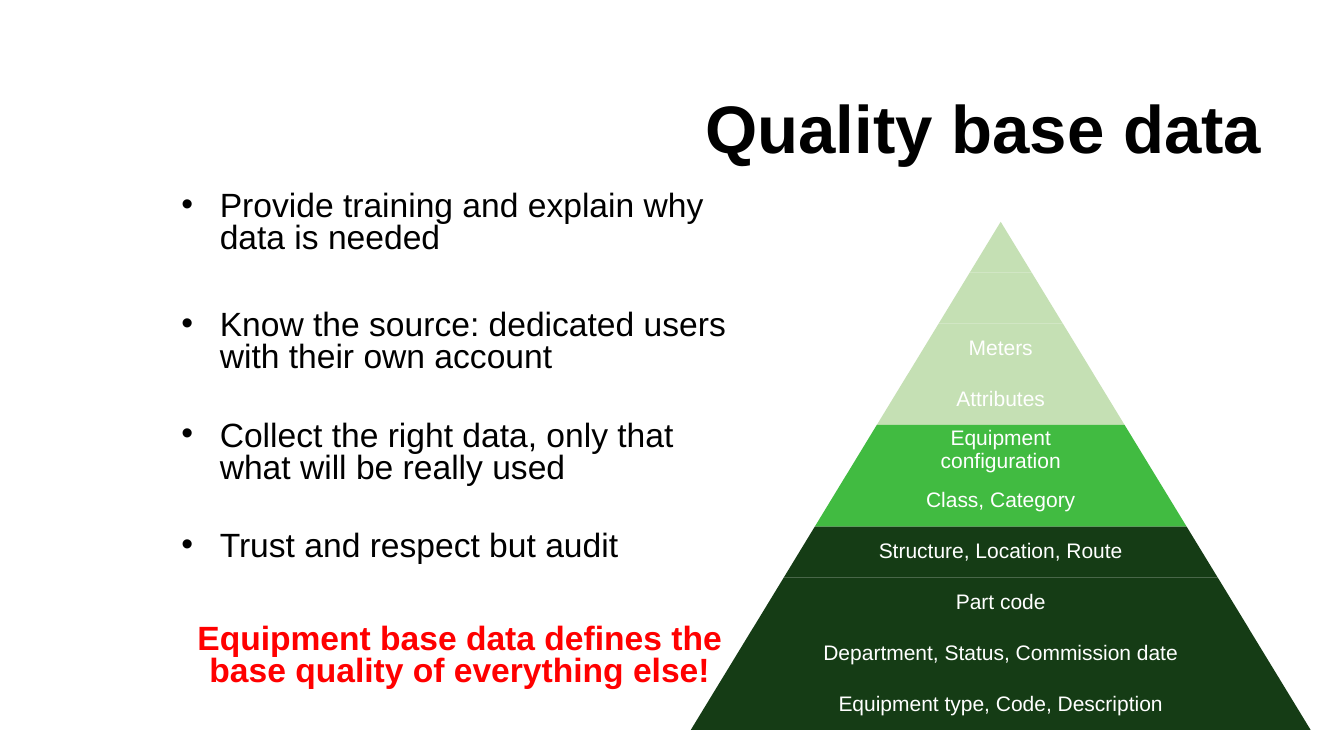
from lxml import etree
from pptx import Presentation
from pptx.dml.color import RGBColor
from pptx.enum.shapes import MSO_SHAPE
from pptx.enum.text import MSO_ANCHOR, PP_ALIGN
from pptx.oxml.ns import qn
from pptx.util import Cm, Pt

TRAPEZOID = MSO_SHAPE.TRAPEZOID
TOP, MIDDLE, BOTTOM = MSO_ANCHOR.TOP, MSO_ANCHOR.MIDDLE, MSO_ANCHOR.BOTTOM
LEFT, CENTER, RIGHT = PP_ALIGN.LEFT, PP_ALIGN.CENTER, PP_ALIGN.RIGHT

BLACK = RGBColor(0x00, 0x00, 0x00)
WHITE = RGBColor(0xFF, 0xFF, 0xFF)
RED = RGBColor(0xFF, 0x00, 0x00)
PALE_GREEN = RGBColor(0xC5, 0xE0, 0xB4)
GREEN = RGBColor(0x41, 0xBB, 0x41)
DARK_GREEN = RGBColor(0x15, 0x3C, 0x15)

ADVICE = [
    ("Provide training and explain why data is needed", 0),
    ("Know the source: dedicated users with their own account", 39),
    ("Collect the right data, only that what will be really used", 33),
    ("Trust and respect but audit", 33),
]
CONCLUSION = "Equipment base data defines the base quality of everything else!"

LEVELS = [
    ("", PALE_GREEN),
    ("", PALE_GREEN),
    ("Meters", PALE_GREEN),
    ("Attributes", PALE_GREEN),
    ("Equipment configuration", GREEN),
    ("Class, Category", GREEN),
    ("Structure, Location, Route", DARK_GREEN),
    ("Part code", DARK_GREEN),
    ("Department, Status, Commission date", DARK_GREEN),
    ("Equipment type, Code, Description", DARK_GREEN),
]


class SlideBuilder:
    font_name = "Arial"

    def __init__(self, page):
        self.page = page

    def text_box(self, left, top, width, height, anchor=TOP, inset=None):
        box = self.page.shapes.add_textbox(Cm(left), Cm(top), Cm(width), Cm(height))
        frame = box.text_frame
        frame.word_wrap = True
        frame.vertical_anchor = anchor
        if inset is not None:
            frame.margin_left = frame.margin_right = Cm(inset)
            frame.margin_top = frame.margin_bottom = Cm(inset)
        return frame

    def fill_paragraph(self, para, text, size, color, align=LEFT, spacing=0.9,
                       before=0, bold=False, bullet=False):
        para.text = text
        para.alignment = align
        para.line_spacing = spacing
        para.space_before = Pt(before)
        if bullet:
            properties = para._p.get_or_add_pPr()
            properties.set("marL", str(Cm(1.02)))
            properties.set("indent", str(Cm(-0.97)))
            etree.SubElement(properties, qn("a:buFont"), typeface=self.font_name)
            etree.SubElement(properties, qn("a:buChar"), char="•")
        para.font.name = self.font_name
        para.font.size = Pt(size)
        para.font.bold = bold
        para.font.color.rgb = color

    def advice(self, left, top, width, height):
        frame = self.text_box(left, top, width, height)
        for index, (text, before) in enumerate(ADVICE):
            para = frame.add_paragraph() if index else frame.paragraphs[0]
            self.fill_paragraph(para, text, 24, BLACK, spacing=0.8, before=before, bullet=True)
        self.fill_paragraph(frame.add_paragraph(), CONCLUSION, 24, RED, CENTER, 0.8, 43, bold=True)

    def pyramid(self, center, top, height, slope):
        for index, (label, color) in enumerate(LEVELS):
            width = 2 * slope * height * (index + 1)
            level_top = top + index * height
            level = self.page.shapes.add_shape(
                TRAPEZOID, Cm(center - width / 2), Cm(level_top), Cm(width), Cm(height))
            level.adjustments[0] = slope
            level.shadow.inherit = False
            level.fill.solid()
            level.fill.fore_color.rgb = color
            level.line.fill.background()
            if label:
                label_width = 0.65 * width
                frame = self.text_box(center - label_width / 2, level_top,
                                      label_width, height, MIDDLE, 0.05)
                self.fill_paragraph(frame.paragraphs[0], label, 15, WHITE, CENTER)


def main():
    deck = Presentation()
    deck.slide_width, deck.slide_height = Cm(33.87), Cm(19.05)
    builder = SlideBuilder(deck.slides.add_slide(deck.slide_layouts[6]))
    title = builder.text_box(1.8, 0.69, 30.25, 3.68, BOTTOM)
    builder.fill_paragraph(title.paragraphs[0], "Quality base data", 48, BLACK, RIGHT, bold=True)
    builder.advice(4.27, 4.7, 14.63, 12.7)
    builder.pyramid(center=25.22, top=5.59, height=1.28, slope=0.61)
    deck.save("out.pptx")


if __name__ == "__main__":
    main()
